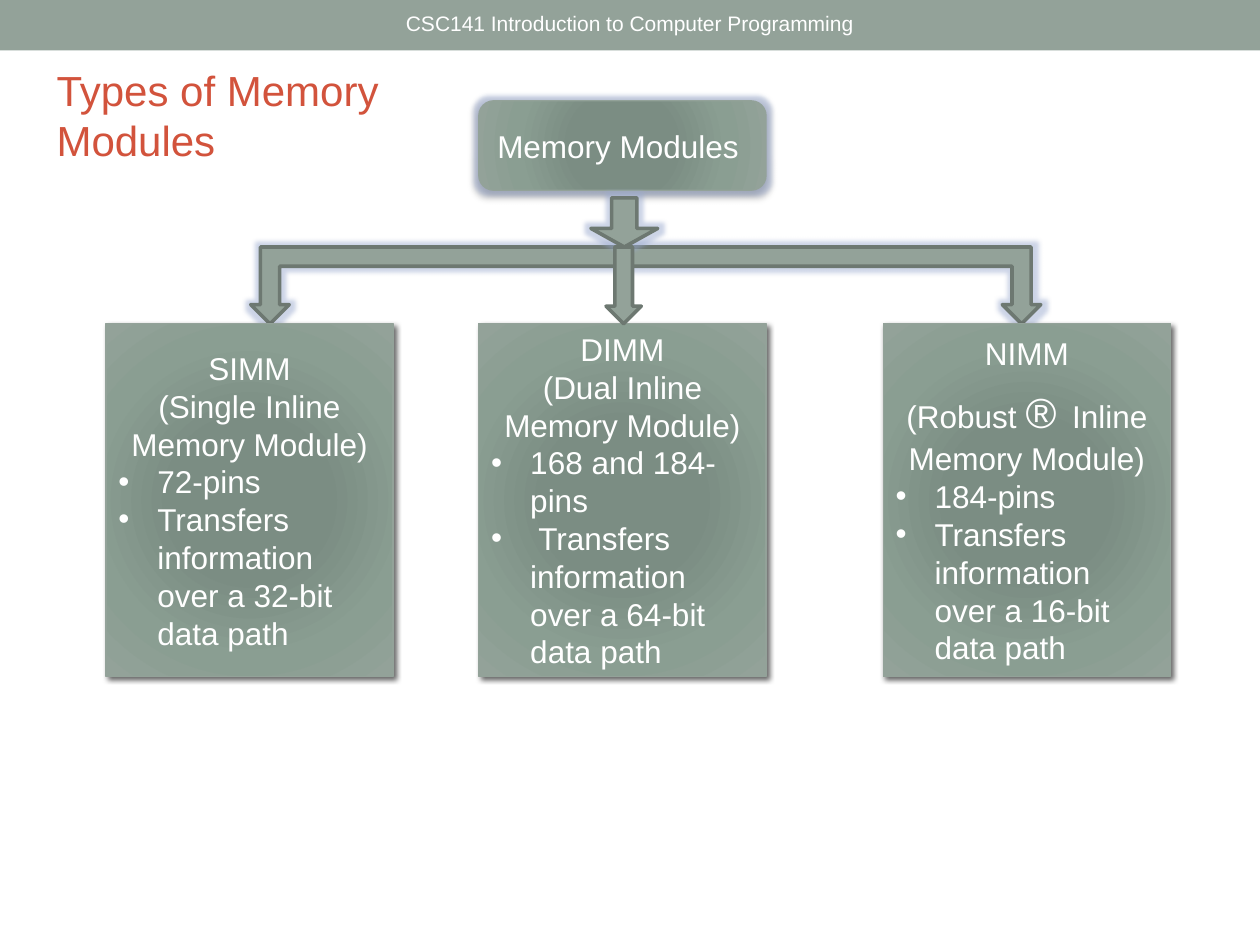
from pptx import Presentation
from pptx.dml.color import RGBColor
from pptx.enum import shapes, text
from pptx.oxml import parse_xml
from pptx.oxml import ns
from pptx.util import Inches, Pt

COLORS = {"sage": "93A299", "outline": "6D7871", "white": "FFFFFF",
          "title": "D2533C", "glow": "9AAACF", "shadow": "000000"}
GRADIENT = [(0, "7B8E82"), (34, "7B8D83"), (70, "8A9E92"), (100, "93A299")]
FONT = "Arial"
SHAPE = shapes.MSO_SHAPE
CENTER, LEFT = text.PP_ALIGN.CENTER, text.PP_ALIGN.LEFT

BOX_WIDTH = 2.28
BOX_TOP, BOX_HEIGHT = 2.57, 2.8
ROOT_LEFT = 3.8
BRANCH_TOP = 1.96
BRANCH_HEIGHT = BOX_TOP - BRANCH_TOP

# Left edge, heading lines (each a list of text and size), bullets
MODULES = [
    (0.84, [[("SIMM", 18)], [("(Single Inline Memory Module)", 18)]],
     ["72-pins", "Transfers information over a 32-bit data path"]),
    (ROOT_LEFT, [[("DIMM", 18)], [("(Dual Inline Memory Module)", 18)]],
     ["168 and 184-pins", " Transfers information over a 64-bit data path"]),
    (7.01, [[("NIMM", 18)],
            [("(Robust ", 18), ("®", 24), (" ", 32), ("Inline Memory Module)", 18)]],
     ["184-pins", "Transfers information over a 16-bit data path"]),
]


def rgb(name):
    return RGBColor.from_string(COLORS[name])


def add_effect(shape, xml):
    shape._element.spPr.find(ns.qn("a:effectLst")).append(parse_xml(xml))


def add_glow(shape):
    add_effect(shape, f'<a:glow {ns.nsdecls("a")} rad="{Pt(5)}">'
               f'<a:srgbClr val="{COLORS["glow"]}"><a:alpha val="50000"/></a:srgbClr></a:glow>')


def add_shadow(shape, alpha, blur, distance, angle):
    add_effect(shape, f'<a:outerShdw {ns.nsdecls("a")} blurRad="{Pt(blur)}" dist="{Pt(distance)}" '
               f'dir="{angle * 60000}" rotWithShape="0"><a:srgbClr val="{COLORS["shadow"]}">'
               f'<a:alpha val="{alpha * 1000}"/></a:srgbClr></a:outerShdw>')


def add_block(slide, kind, left, top, width, height, line="sage", weight=0.75):
    block = slide.shapes.add_shape(kind, Inches(left), Inches(top), Inches(width), Inches(height))
    block.shadow.inherit = False
    block.line.color.rgb = rgb(line)
    block.line.width = Pt(weight)
    return block


def add_gradient_box(slide, kind, left, top, height):
    box = add_block(slide, kind, left, top, BOX_WIDTH, height)
    stops = "".join(f'<a:gs pos="{pos * 1000}"><a:srgbClr val="{color}"/></a:gs>'
                    for pos, color in GRADIENT)
    # The fill follows the position and the geometry
    box._element.spPr.insert(2, parse_xml(
        f'<a:gradFill {ns.nsdecls("a")} rotWithShape="1"><a:gsLst>{stops}</a:gsLst>'
        '<a:path path="circle"><a:fillToRect l="100000" t="100000" r="100000" b="100000"/>'
        '</a:path></a:gradFill>'))
    box.text_frame.word_wrap = True
    box.text_frame.vertical_anchor = text.MSO_ANCHOR.MIDDLE
    return box


def add_arrow(slide, kind, left, top, width, height, glow=True):
    arrow = add_block(slide, kind, left, top, width, height, "outline", 2.08)
    arrow.fill.solid()
    arrow.fill.fore_color.rgb = rgb("sage")
    if glow:
        add_glow(arrow)
    return arrow


def style(paragraph, size, color="white", align=CENTER):
    paragraph.alignment = align
    paragraph.font.name = FONT
    paragraph.font.size = Pt(size)
    paragraph.font.color.rgb = rgb(color)


def add_bullet(paragraph):
    properties = paragraph._p.get_or_add_pPr()
    properties.set("marL", str(Inches(0.31)))
    properties.set("indent", str(-Inches(0.31)))
    properties.append(parse_xml(f'<a:buFont {ns.nsdecls("a")} typeface="{FONT}"/>'))
    properties.append(parse_xml(f'<a:buChar {ns.nsdecls("a")} char="•"/>'))


def add_label(slide, left, top, width, height, words, size, color, align):
    label = slide.shapes.add_textbox(Inches(left), Inches(top), Inches(width), Inches(height))
    label.text_frame.word_wrap = True
    label.text_frame.text = words
    style(label.text_frame.paragraphs[0], size, color, align)
    return label


def add_module(slide, left, headings, bullets):
    box = add_gradient_box(slide, SHAPE.RECTANGLE, left, BOX_TOP, BOX_HEIGHT)
    add_shadow(box, 60, 3, 2, 45)
    frame = box.text_frame
    for number, pieces in enumerate(headings):
        heading = frame.add_paragraph() if number else frame.paragraphs[0]
        style(heading, 18)
        for words, size in pieces:
            run = heading.add_run()
            run.text = words
            if size != 18:
                run.font.size = Pt(size)
    for words in bullets:
        item = frame.add_paragraph()
        item.text = words
        add_bullet(item)
        style(item, 18, align=LEFT)


def main():
    deck = Presentation()
    deck.slide_width, deck.slide_height = Inches(10), Inches(7.5)
    slide = deck.slides.add_slide(deck.slide_layouts[6])

    # Course band
    band = add_block(slide, SHAPE.RECTANGLE, 0, 0, 10, 0.4)
    band.fill.solid()
    band.fill.fore_color.rgb = rgb("sage")
    band.line.fill.background()
    course = add_label(slide, 2.75, 0, 4.5, 0.36,
                       "CSC141 Introduction to Computer Programming", 12, "white", CENTER)
    course.text_frame.vertical_anchor = text.MSO_ANCHOR.MIDDLE

    # Root of the tree
    root = add_gradient_box(slide, SHAPE.ROUNDED_RECTANGLE, ROOT_LEFT, 0.8, 0.71)
    add_glow(root)
    add_shadow(root, 35, 3.1, 1.8, 90)
    root.text_frame.text = "Memory Modules "
    style(root.text_frame.paragraphs[0], 18)

    # Branches to the outer modules, and the stem above them
    for left, width, flipped in [(1.99, 2.96, False), (4.95, 3.31, True)]:
        branch = add_arrow(slide, SHAPE.BENT_UP_ARROW, left, BRANCH_TOP, width, BRANCH_HEIGHT)
        branch.rotation = 180
        if flipped:
            branch._element.spPr.xfrm.set("flipH", "1")
    stem = add_arrow(slide, SHAPE.DOWN_ARROW, 4.69, 1.57, 0.53, 0.39)
    stem.adjustments[0] = stem.adjustments[1] = 0.378

    # Modules
    for module in MODULES:
        add_module(slide, *module)
    add_arrow(slide, SHAPE.DOWN_ARROW, 4.81, BRANCH_TOP, 0.28, BRANCH_HEIGHT, glow=False)

    # Title
    title = add_label(slide, 0.35, 0.46, 3.11, 0.91, "Types of Memory Modules", 24, "title", LEFT)
    title.text_frame.auto_size = text.MSO_AUTO_SIZE.SHAPE_TO_FIT_TEXT

    deck.save("out.pptx")


if __name__ == "__main__":
    main()
